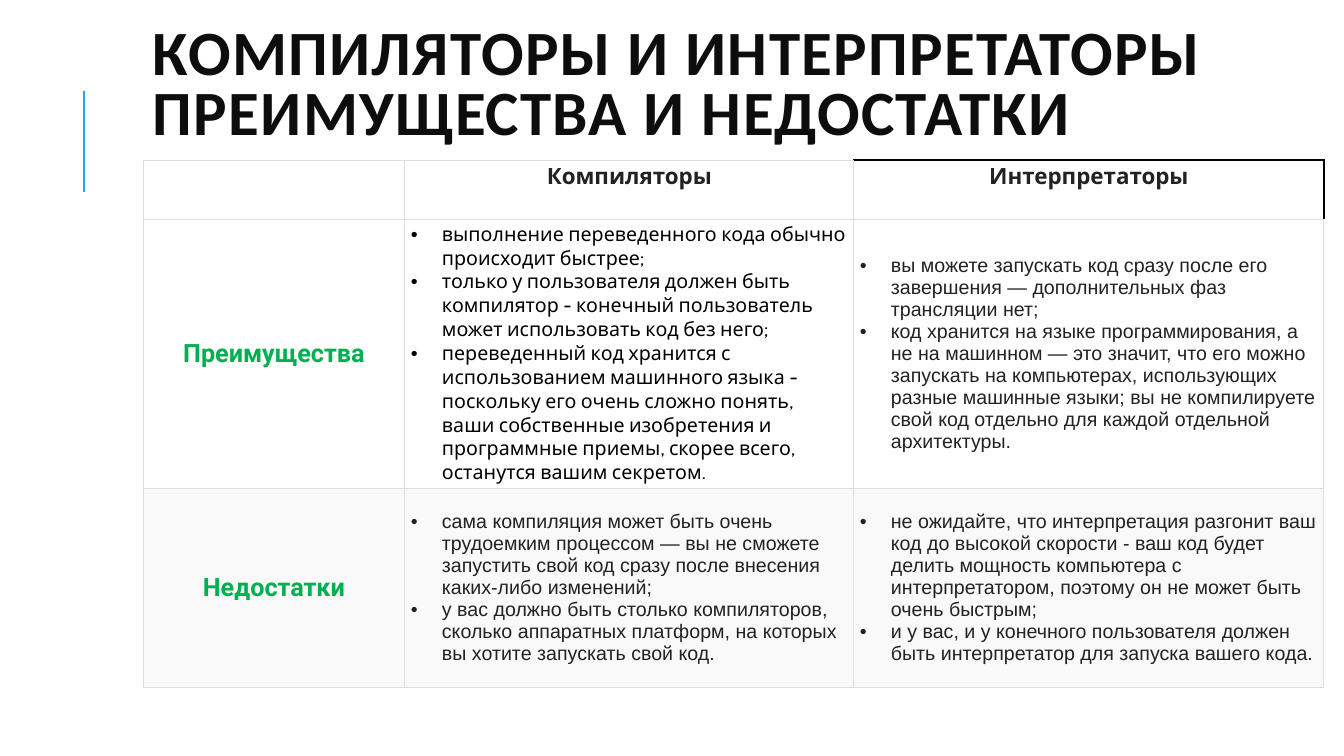
from lxml import etree
from pptx import Presentation
from pptx.dml.color import RGBColor
from pptx.enum.shapes import MSO_CONNECTOR
from pptx.enum.text import MSO_ANCHOR, PP_ALIGN
from pptx.oxml.ns import qn
from pptx.util import Emu, Pt

STRAIGHT = MSO_CONNECTOR.STRAIGHT
TOP, MIDDLE = MSO_ANCHOR.TOP, MSO_ANCHOR.MIDDLE
LEFT, CENTER = PP_ALIGN.LEFT, PP_ALIGN.CENTER

C = {"accent": "1CADE4", "title": "0D0D0D", "text": "222222", "black": "000000",
     "green": "00B050", "grid": "DDDDDD", "white": "FFFFFF", "band": "F9F9F9"}

COLUMNS = [262, 449, 470]
ROWS = [59, 269, 200]
HEADERS = ["Компиляторы", "Интерпретаторы"]
ROW_NAMES = ["Преимущества", "Недостатки"]
POINTS = [
    [["выполнение переведенного кода обычно происходит быстрее;",
      "только у пользователя должен быть компилятор - конечный пользователь может "
      "использовать код без него;",
      "переведенный код хранится с использованием машинного языка - поскольку его очень "
      "сложно понять, ваши собственные изобретения и программные приемы, скорее всего, "
      "останутся вашим секретом."],
     ["вы можете запускать код сразу после его завершения — дополнительных фаз "
      "трансляции нет;",
      "код хранится на языке программирования, а не на машинном — это значит, что его "
      "можно запускать на компьютерах, использующих разные машинные языки; вы не "
      "компилируете свой код отдельно для каждой отдельной архитектуры."]],
    [["сама компиляция может быть очень трудоемким процессом — вы не сможете запустить "
      "свой код сразу после внесения каких-либо изменений;",
      "у вас должно быть столько компиляторов, сколько аппаратных платформ, на которых "
      "вы хотите запускать свой код."],
     ["не ожидайте, что интерпретация разгонит ваш код до высокой скорости - ваш код "
      "будет делить мощность компьютера с интерпретатором, поэтому он не может быть "
      "очень быстрым;",
      "и у вас, и у конечного пользователя должен быть интерпретатор для запуска "
      "вашего кода."]],
]


def px(n):
    return Emu(round(n * 914400 / 100.8))


def rgb(name):
    return RGBColor.from_string(C[name])


def write(tf, paragraphs, font, size, color, bold=False, align=LEFT,
          bullet=False, leading=None, spacing=None):
    """Fill a text frame, one paragraph for each string."""
    tf.word_wrap = True
    for i, text in enumerate(paragraphs):
        p = tf.paragraphs[0] if i == 0 else tf.add_paragraph()
        p.alignment = align
        if leading:
            p.line_spacing = leading
        if bullet:
            pPr = p._p.get_or_add_pPr()
            pPr.set("marL", str(px(31)))
            pPr.set("indent", str(-px(31)))
            etree.SubElement(pPr, qn("a:buFont")).set("typeface", "Arial")
            etree.SubElement(pPr, qn("a:buChar")).set("char", "•")
        for j, line in enumerate(text.split("\n")):
            if j:
                p.add_line_break()
            r = p.add_run()
            r.text = line
            r.font.name, r.font.size, r.font.bold = font, Pt(size), bold
            r.font.color.rgb = rgb(color)
            if spacing:
                r._r.get_or_add_rPr().set("spc", str(spacing))


def set_borders(cell, **special):
    """Draw grey cell borders, or black ones on the sides given as special."""
    tcPr = cell._tc.get_or_add_tcPr()
    for i, side in enumerate("LRTB"):
        color, width = special.get(side, ("grid", 0.75))
        ln = etree.Element(qn("a:ln" + side), w=str(Pt(width)))
        fill = etree.SubElement(ln, qn("a:solidFill"))
        etree.SubElement(fill, qn("a:srgbClr")).set("val", C[color])
        tcPr.insert(i, ln)


def add_accent_line(slide, x, y, h):
    line = slide.shapes.add_connector(STRAIGHT, px(x), px(y + h), px(x), px(y))
    line.line.color.rgb = rgb("accent")
    line.line.width = Pt(1.5)
    etree.SubElement(line._element.spPr, qn("a:effectLst"))


def add_title(slide, x, y, w, h):
    tf = slide.shapes.add_textbox(px(x), px(y), px(w), px(h)).text_frame
    tf.vertical_anchor = MIDDLE
    tf.margin_bottom = px(65)
    write(tf, ["КОМПИЛЯТОРЫ И ИНТЕРПРЕТАТОРЫ\nПРЕИМУЩЕСТВА И НЕДОСТАТКИ"],
          "Calibri", 45, "title", bold=True, leading=0.8, spacing=100)


def add_comparison(slide, x, y):
    table = slide.shapes.add_table(len(ROWS), len(COLUMNS), px(x), px(y),
                                   px(sum(COLUMNS)), px(sum(ROWS))).table
    table.first_row = table.horz_banding = False
    for column, w in zip(table.columns, COLUMNS):
        column.width = px(w)
    for row, h in zip(table.rows, ROWS):
        row.height = px(h)

    for r, row in enumerate(table.rows):
        for c, cell in enumerate(row.cells):
            cell.margin_left = cell.margin_right = px(6)
            cell.margin_top = cell.margin_bottom = px(3)
            cell.vertical_anchor = MIDDLE if r else TOP
            cell.fill.solid()
            cell.fill.fore_color.rgb = rgb("band" if r == 2 else "white")
            black = ("black", 1)
            set_borders(cell, **({"T": black, "R": black} if (r, c) == (0, 2) else {}))
            tf = cell.text_frame
            if r and c:
                font, color = ("Cabin", "black") if r == c == 1 else ("Arial", "text")
                write(tf, POINTS[r - 1][c - 1], font, 14, color, bullet=True)
            elif r:
                write(tf, [ROW_NAMES[r - 1]], "Roboto", 18, "green", bold=True, align=CENTER)
            elif c:
                write(tf, [HEADERS[c - 1]], "Cabin", 16, "text", bold=True, align=CENTER)


def main():
    prs = Presentation()
    prs.slide_width, prs.slide_height = px(1344), px(756)
    slide = prs.slides.add_slide(prs.slide_layouts[6])
    add_accent_line(slide, 84, 91, 101)
    add_title(slide, 143, 36, 1160, 163)
    add_comparison(slide, 143, 160)
    prs.save("out.pptx")


if __name__ == "__main__":
    main()
